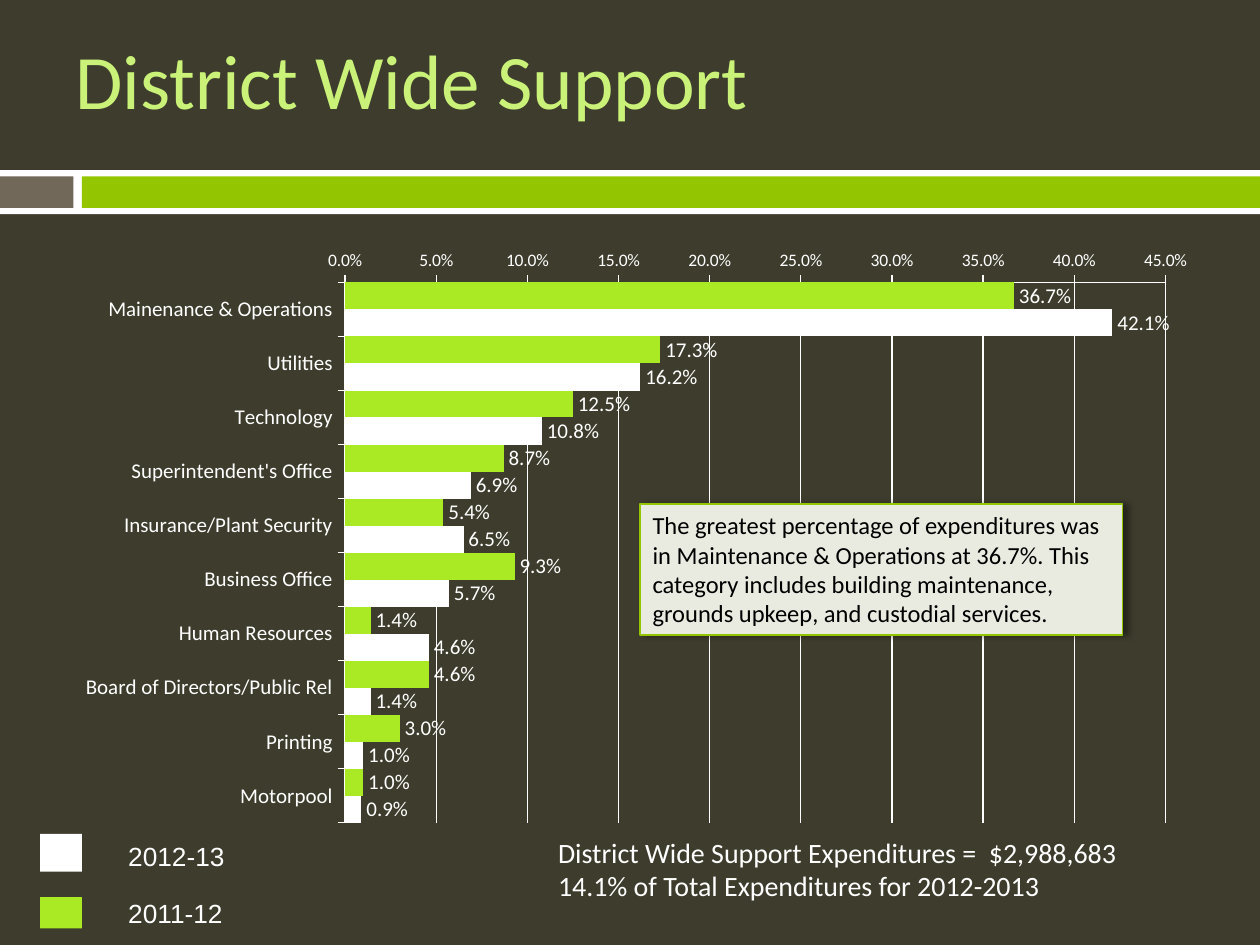
from lxml import etree
from pptx import Presentation
from pptx.chart.data import CategoryChartData
from pptx.dml.color import RGBColor
from pptx.enum import chart as charts, shapes, text
from pptx.oxml import parse_xml
from pptx.oxml.ns import qn
from pptx.util import Pt

COLORS = {
    "background": "3E3D2D", "white": "FFFFFF", "black": "000000",
    "taupe": "71685A", "green": "94C600", "lime": "AAEA25",
    "title": "CAF278", "note": "E9EAE0",
}
TITLE = "District Wide Support"
NOTE = ("The greatest percentage of expenditures was in Maintenance & Operations "
        "at 36.7%. This category includes building maintenance, grounds upkeep, "
        "and custodial services.")
SUMMARY = ["District Wide Support Expenditures =  $2,988,683",
           "14.1% of Total Expenditures for 2012-2013"]
# category, share in series 1, share in series 2
EXPENDITURES = [
    ("Mainenance & Operations", 0.367, 0.421),
    ("Utilities", 0.173, 0.162),
    ("Technology", 0.125, 0.108),
    ("Superintendent's Office", 0.087, 0.069),
    ("Insurance/Plant Security", 0.054, 0.065),
    ("Business Office", 0.093, 0.057),
    ("Human Resources", 0.014, 0.046),
    ("Board of Directors/Public Rel", 0.046, 0.014),
    ("Printing", 0.03, 0.01),
    ("Motorpool", 0.01, 0.009),
]
SERIES_COLORS = ["lime", "white"]
PERCENT = "0.0%"
# left, top, width, height, color
BANDS = [
    (0, 97.2, 720, 25.2, "white"),
    (0, 100.8, 42, 18, "taupe"),
    (46.8, 100.8, 673.2, 18, "green"),
]
# label, label top, swatch top, swatch height, color
LEGEND = [
    ("2012-13", 476.6, 476.6, 21.6, "white"),
    ("2011-12", 509, 512.6, 18, "lime"),
]
PLOT = {"x": 0.232, "y": 0.1, "w": 0.73, "h": 0.872}


def rgb(name):
    return RGBColor.from_string(COLORS[name])


def style_font(font, size, color, name="Calibri"):
    font.size = Pt(size)
    font.name = name
    font.color.rgb = rgb(color)


def add_box(slide, left, top, width, height, color):
    shape = slide.shapes.add_shape(shapes.MSO_SHAPE.RECTANGLE,
                                   Pt(left), Pt(top), Pt(width), Pt(height))
    shape.shadow.inherit = False
    shape.fill.solid()
    shape.fill.fore_color.rgb = rgb(color)
    shape.line.fill.background()
    return shape


def write(shape, lines, size, color, font="Calibri", anchor=text.MSO_ANCHOR.TOP):
    frame = shape.text_frame
    frame.word_wrap = True
    frame.vertical_anchor = anchor
    frame.text = "\n".join(lines)
    for paragraph in frame.paragraphs:
        paragraph.alignment = text.PP_ALIGN.LEFT
        style_font(paragraph.font, size, color, font)


def add_text(slide, left, top, width, height, lines, size, color, **options):
    box = slide.shapes.add_textbox(Pt(left), Pt(top), Pt(width), Pt(height))
    write(box, lines, size, color, **options)


def add_note(slide):
    note = add_box(slide, 365.8, 288, 275.8, 74.9, "note")
    note.line.color.rgb = rgb("green")
    note.line.width = Pt(0.79)
    write(note, [NOTE], 14, "black")
    effects = note._element.spPr.find(qn("a:effectLst"))
    shadow = etree.SubElement(effects, qn("a:outerShdw"), blurRad=str(Pt(4)),
                              dist=str(Pt(3)), dir="0", rotWithShape="0")
    color = etree.SubElement(shadow, qn("a:srgbClr"), val=COLORS["black"])
    etree.SubElement(color, qn("a:alpha"), val="40000")


def set_plot_layout(chart):
    """Fix the inner plot area as fractions of the chart."""
    area = chart._chartSpace.chart.plotArea
    for layout in area.findall(qn("c:layout")):
        area.remove(layout)
    modes = '<c:xMode val="edge"/><c:yMode val="edge"/>'
    sizes = "".join(f'<c:{key} val="{value}"/>' for key, value in PLOT.items())
    area.insert(0, parse_xml(
        '<c:layout xmlns:c="http://schemas.openxmlformats.org/drawingml/2006/chart">'
        f'<c:manualLayout><c:layoutTarget val="inner"/>{modes}{sizes}'
        '</c:manualLayout></c:layout>'))


def add_expenditure_chart(slide):
    categories, *columns = zip(*EXPENDITURES)
    data = CategoryChartData(number_format=PERCENT)
    data.categories = categories
    for number, values in enumerate(columns, 1):
        data.add_series(f"Series {number}", values)
    chart = slide.shapes.add_chart(
        charts.XL_CHART_TYPE.BAR_CLUSTERED,
        Pt(48.2), Pt(126), Pt(642.2), Pt(354.2), data).chart
    style_font(chart.font, 18, "white")
    chart.has_legend = False
    chart.has_title = False
    set_plot_layout(chart)

    for axis, size in ((chart.category_axis, 12), (chart.value_axis, 10)):
        style_font(axis.tick_labels.font, size, "white")
        axis.major_tick_mark = charts.XL_TICK_MARK.OUTSIDE
        axis.minor_tick_mark = charts.XL_TICK_MARK.NONE
        axis.format.line.color.rgb = rgb("white")
        axis.format.line.width = Pt(0.75)
    chart.category_axis.reverse_order = True
    value_axis = chart.value_axis
    value_axis.minimum_scale, value_axis.maximum_scale = 0, 0.45
    value_axis.major_unit = 0.05
    value_axis.tick_labels.number_format = PERCENT
    value_axis.tick_labels.number_format_is_linked = False
    value_axis.has_major_gridlines = True
    value_axis.major_gridlines.format.line.color.rgb = rgb("white")
    value_axis.major_gridlines.format.line.width = Pt(0.75)

    plot = chart.plots[0]
    plot.gap_width = 0
    plot.overlap = 0
    plot.vary_by_categories = False
    for series, color in zip(plot.series, SERIES_COLORS):
        series.format.fill.solid()
        series.format.fill.fore_color.rgb = rgb(color)
        labels = series.data_labels
        labels.show_value = True
        labels.number_format = PERCENT
        labels.number_format_is_linked = False
        labels.position = charts.XL_LABEL_POSITION.OUTSIDE_END
        style_font(labels.font, 12, "white")


def main():
    presentation = Presentation()
    presentation.slide_width, presentation.slide_height = Pt(720), Pt(540)
    slide = presentation.slides.add_slide(presentation.slide_layouts[6])
    slide.background.fill.solid()
    slide.background.fill.fore_color.rgb = rgb("background")

    for band in BANDS:
        add_box(slide, *band)
    add_text(slide, 36, 0, 648, 90, [TITLE], 44, "title",
             anchor=text.MSO_ANCHOR.MIDDLE)
    add_expenditure_chart(slide)
    add_note(slide)
    add_text(slide, 311.8, 473.8, 347.8, 48.2, SUMMARY, 16, "white")
    for label, label_top, swatch_top, swatch_height, color in LEGEND:
        add_box(slide, 23, swatch_top, 23.8, swatch_height, color)
        add_text(slide, 66.2, label_top, 72, 25.2, [label], 15, "white", font="Arial")
    presentation.save("out.pptx")


if __name__ == "__main__":
    main()
